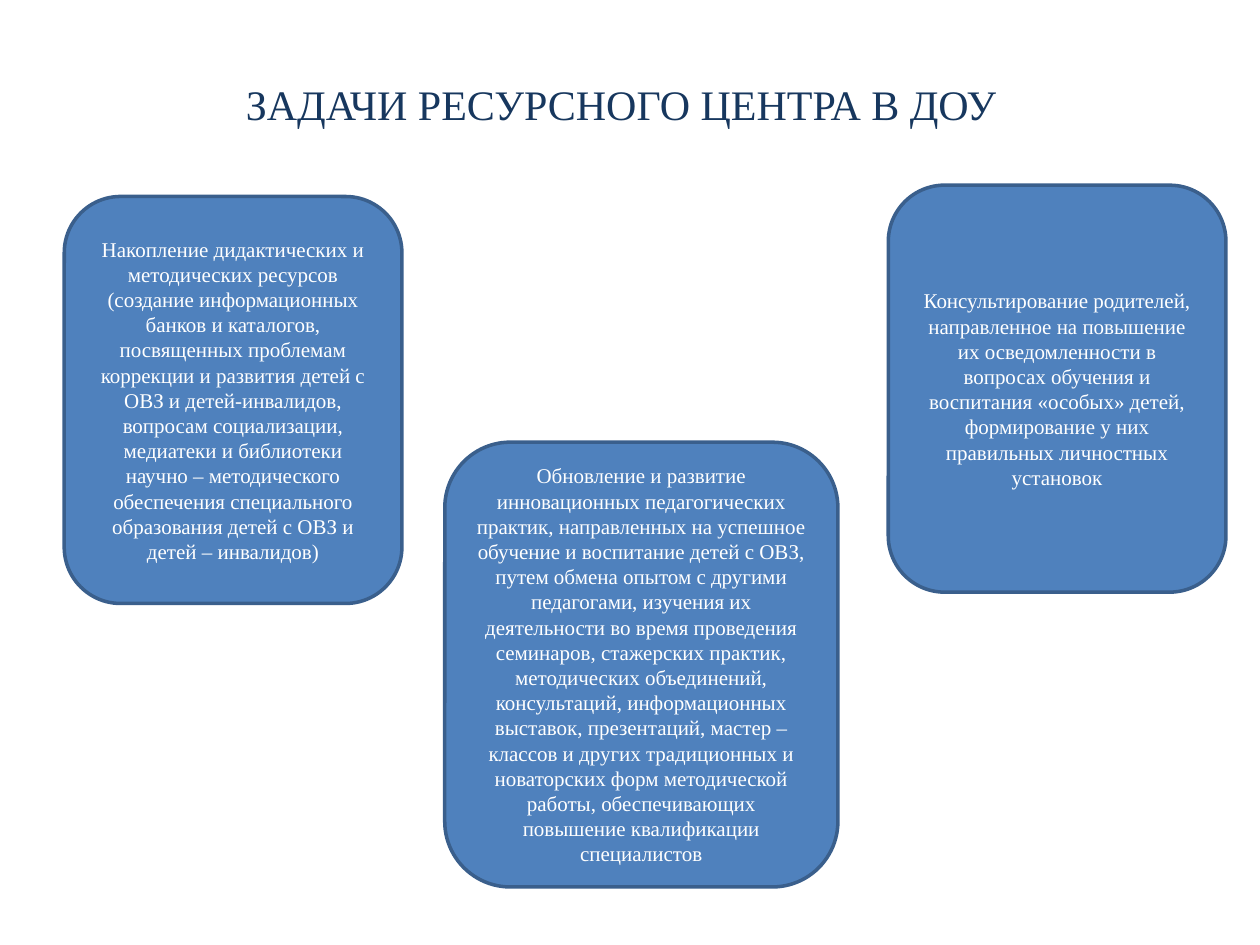
from pptx import Presentation
from pptx.dml.color import RGBColor
from pptx.enum import shapes, text
from pptx.util import Inches, Pt

FONT = "Times New Roman"
TITLE = "ЗАДАЧИ РЕСУРСНОГО ЦЕНТРА В ДОУ"

# Each task: left, top, width, height in inches, and its wording
TASKS = [
    (0.51, 1.56, 2.68, 3.23,
     "Накопление дидактических и методических ресурсов (создание "
     "информационных банков и каталогов, посвященных проблемам коррекции и "
     "развития детей с ОВЗ и детей-инвалидов, вопросам социализации, "
     "медиатеки и библиотеки научно – методического обеспечения специального "
     "образования детей с ОВЗ и детей – инвалидов)"),
    (3.53, 3.51, 3.12, 3.53,
     "Обновление и развитие инновационных педагогических практик, "
     "направленных на успешное обучение и воспитание детей с ОВЗ, путем "
     "обмена опытом с другими педагогами, изучения их деятельности во время "
     "проведения семинаров, стажерских практик, методических объединений, "
     "консультаций, информационных выставок, презентаций, мастер – классов и "
     "других традиционных и новаторских форм методической работы, "
     "обеспечивающих повышение квалификации специалистов"),
    (7.05, 1.47, 2.68, 3.23,
     "Консультирование родителей, направленное на повышение их "
     "осведомленности в вопросах обучения и воспитания «особых» детей, "
     "формирование у них правильных личностных установок"),
]


def color(hex_value):
    return RGBColor.from_string(hex_value)


def write_centered(holder, wording, size, hex_value):
    frame = holder.text_frame
    frame.word_wrap = True
    frame.vertical_anchor = text.MSO_ANCHOR.MIDDLE
    frame.text = wording
    paragraph = frame.paragraphs[0]
    paragraph.alignment = text.PP_ALIGN.CENTER
    font = paragraph.runs[0].font
    font.name, font.size = FONT, Pt(size)
    font.color.rgb = color(hex_value)


def add_heading(slide, left, top, width, height):
    heading = slide.shapes.add_textbox(
        Inches(left), Inches(top), Inches(width), Inches(height))
    write_centered(heading, TITLE, 24, "17375E")
    # A deeper bottom margin lifts the line above the middle
    heading.text_frame.margin_bottom = Inches(0.2)


def add_task(slide, left, top, width, height, wording):
    task = slide.shapes.add_shape(
        shapes.MSO_SHAPE.ROUNDED_RECTANGLE,
        Inches(left), Inches(top), Inches(width), Inches(height))
    task.shadow.inherit = False
    task.fill.solid()
    task.fill.fore_color.rgb = color("4F81BD")
    task.line.color.rgb = color("3A5F8C")
    task.line.width = Pt(2)
    write_centered(task, wording, 12, "FFFFFF")


def main():
    deck = Presentation()
    deck.slide_width, deck.slide_height = Inches(10), Inches(7.5)
    slide = deck.slides.add_slide(deck.slide_layouts[6])

    # Heading
    add_heading(slide, 0.43, 0.27, 9, 1.25)

    # Task cards
    for task in TASKS:
        add_task(slide, *task)

    deck.save("out.pptx")


if __name__ == "__main__":
    main()
